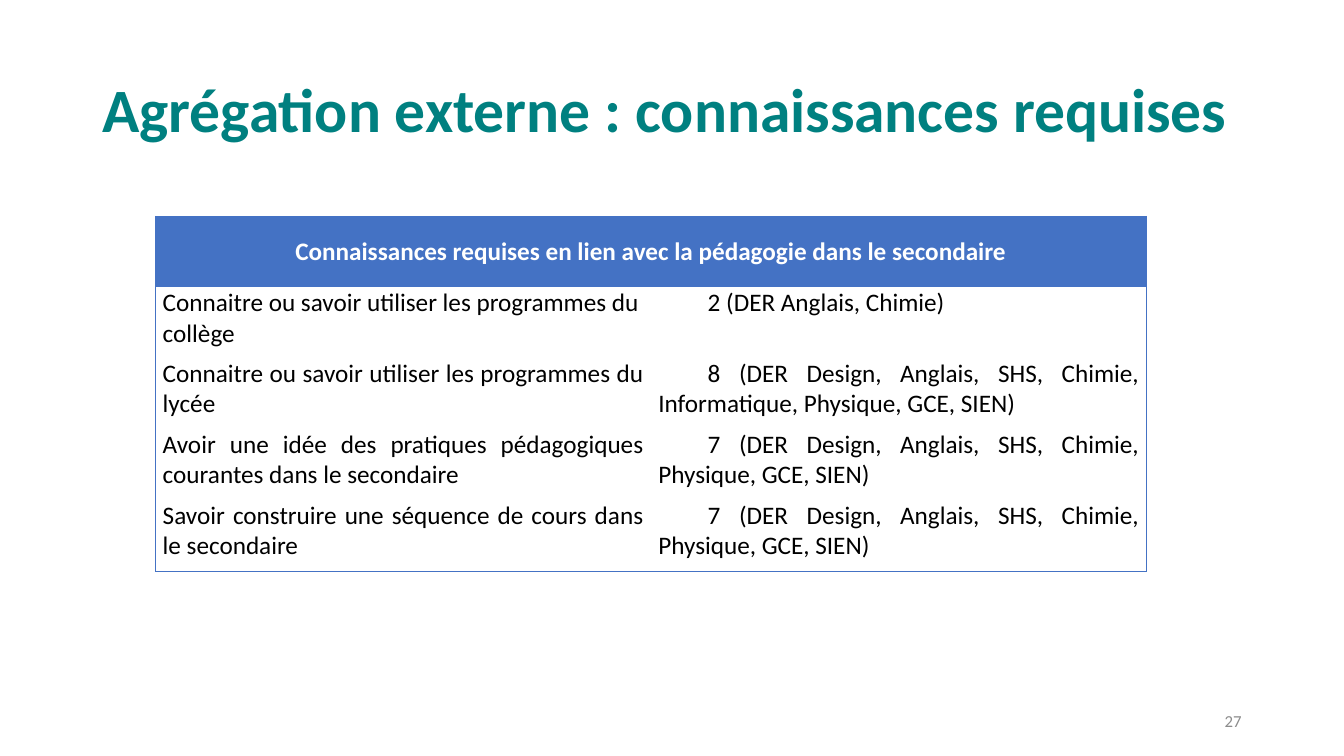
from dataclasses import dataclass

from lxml import etree
from pptx import Presentation
from pptx.dml.color import RGBColor
from pptx.enum.text import MSO_ANCHOR, PP_ALIGN
from pptx.oxml.ns import qn
from pptx.util import Pt

EMU_PER_PX = 9525
MIDDLE, TOP = MSO_ANCHOR.MIDDLE, MSO_ANCHOR.TOP
LEFT, CENTER, RIGHT, JUSTIFY = PP_ALIGN.LEFT, PP_ALIGN.CENTER, PP_ALIGN.RIGHT, PP_ALIGN.JUSTIFY

HEADING = "Connaissances requises en lien avec la pédagogie dans le secondaire"
SKILLS = [
    ("Connaitre ou savoir utiliser les programmes du collège", "2 (DER Anglais, Chimie)"),
    ("Connaitre ou savoir utiliser les programmes du lycée",
     "8 (DER Design, Anglais, SHS, Chimie, Informatique, Physique, GCE, SIEN)"),
    ("Avoir une idée des pratiques pédagogiques courantes dans le secondaire",
     "7 (DER Design, Anglais, SHS, Chimie, Physique, GCE, SIEN)"),
    ("Savoir construire une séquence de cours dans le secondaire",
     "7 (DER Design, Anglais, SHS, Chimie, Physique, GCE, SIEN)"),
]


@dataclass(frozen=True)
class Theme:
    """Colours and type sizes of the slide."""
    font: str = "Calibri"
    title: str = "008080"
    accent: str = "4472C4"
    light: str = "FFFFFF"
    ink: str = "000000"
    muted: str = "8C8C8C"
    title_size: int = 44
    table_size: int = 18
    number_size: int = 12
    border: float = 0.5


@dataclass(frozen=True)
class Box:
    """A region of the slide in px."""
    left: int
    top: int
    width: int
    height: int

    def emu(self):
        """Return the four lengths in EMU."""
        return [px(side) for side in (self.left, self.top, self.width, self.height)]


THEME = Theme()


def px(length):
    """Turn px into EMU."""
    return length * EMU_PER_PX


def write(para, text, size, color, bold=False, align=LEFT):
    """Put formatted text into a paragraph."""
    para.text = text
    para.alignment = align
    font = para.runs[0].font
    font.name, font.size, font.bold = THEME.font, Pt(size), bold
    font.color.rgb = RGBColor.from_string(color)


def add_label(slide, box, text, size, color, bold=False, align=LEFT, spacing=1.0):
    """Add a vertically centred line of text."""
    frame = slide.shapes.add_textbox(*box.emu()).text_frame
    frame.word_wrap = True
    frame.vertical_anchor = MIDDLE
    write(frame.paragraphs[0], text, size, color, bold, align)
    frame.paragraphs[0].line_spacing = spacing


def set_borders(cell, visible):
    """Draw the named sides of a cell and hide the others."""
    properties = cell._tc.get_or_add_tcPr()
    for position, side in enumerate("LRTB"):
        line = etree.Element(qn(f"a:ln{side}"), w=str(Pt(THEME.border)))
        if side in visible:
            fill = etree.SubElement(line, qn("a:solidFill"))
            etree.SubElement(fill, qn("a:srgbClr"), val=THEME.accent)
        else:
            etree.SubElement(line, qn("a:noFill"))
        properties.insert(position, line)


def fill_cell(cell, text, color, bold, align, anchor):
    """Write one table cell with its margins."""
    cell.margin_left = cell.margin_right = px(7)
    cell.margin_top = cell.margin_bottom = 0
    cell.vertical_anchor = anchor
    write(cell.text_frame.paragraphs[0], text, THEME.table_size, color, bold, align)


def add_skills_table(slide, box):
    """Add the table of required knowledge with its merged heading."""
    last = len(SKILLS)
    table = slide.shapes.add_table(last + 1, 2, *box.emu()).table
    table.first_row = table.horz_banding = False
    for row in table.rows:
        row.height = px(box.height) // (last + 1)
    for column in range(2):
        heading_cell = table.cell(0, column)
        heading_cell.fill.solid()
        heading_cell.fill.fore_color.rgb = RGBColor.from_string(THEME.accent)
        set_borders(heading_cell, "LRT")
    table.cell(0, 0).merge(table.cell(0, 1))
    fill_cell(table.cell(0, 0), HEADING, THEME.light, True, CENTER, MIDDLE)
    for index, texts in enumerate(SKILLS, start=1):
        for column, text in enumerate(texts):
            cell = table.cell(index, column)
            align = LEFT if (index, column) == (1, 0) else JUSTIFY
            fill_cell(cell, text, THEME.ink, False, align, TOP)
            cell.fill.background()
            set_borders(cell, "LR"[column] + ("B" if index == last else ""))
            if column == 1:
                para_properties = cell.text_frame.paragraphs[0]._p.get_or_add_pPr()
                para_properties.set("marL", "0")
                para_properties.set("indent", str(px(47)))


def build_slide(deck):
    """Place the title, the table and the slide number."""
    slide = deck.slides.add_slide(deck.slide_layouts[6])
    add_label(slide, Box(88, 38, 1104, 139), "Agrégation externe : connaissances requises",
              THEME.title_size, THEME.title, bold=True, spacing=0.9)
    add_skills_table(slide, Box(148, 206, 944, 338))
    add_label(slide, Box(904, 667, 288, 38), "27", THEME.number_size, THEME.muted, align=RIGHT)


def main():
    """Build and save the deck."""
    deck = Presentation()
    deck.slide_width, deck.slide_height = px(1280), px(720)
    build_slide(deck)
    deck.save("out.pptx")


if __name__ == "__main__":
    main()
